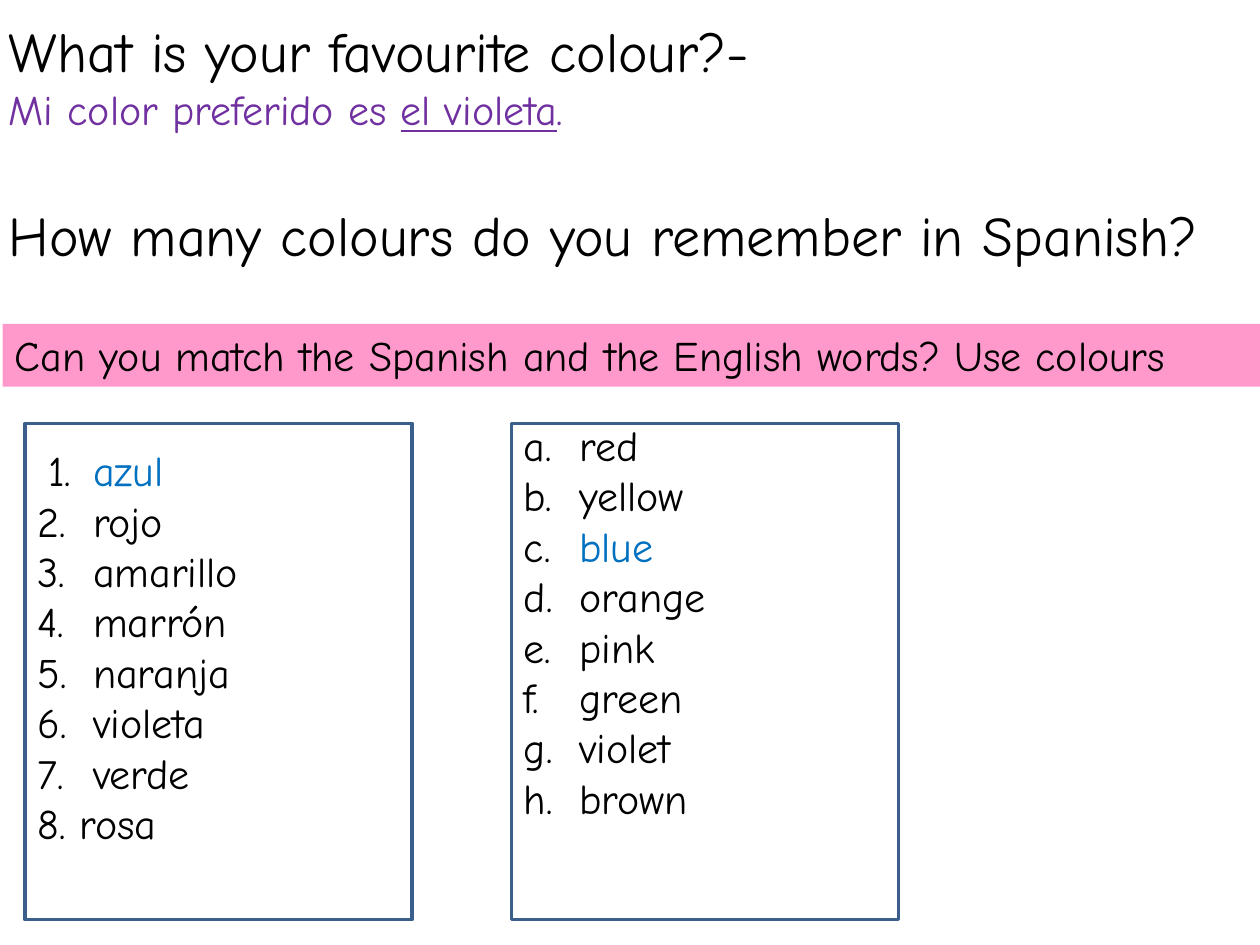
import pptx
import pptx.util
import pptx.dml.color
import pptx.enum.shapes
import pptx.enum.text

Inches, Pt = pptx.util.Inches, pptx.util.Pt
ANCHOR = pptx.enum.text.MSO_ANCHOR
BLACK, WHITE, BLUE, VIOLET = "000000", "FFFFFF", "0070C0", "7030A0"


def color(hex_value):
    return pptx.dml.color.RGBColor.from_string(hex_value)


def add_text(paragraph, text, size=24, ink=BLACK, underline=None):
    paragraph.alignment = pptx.enum.text.PP_ALIGN.LEFT
    run = paragraph.add_run()
    run.text = text
    run.font.name = "Comic Neue"
    run.font.size = Pt(size)
    run.font.color.rgb = color(ink)
    run.font.underline = underline


presentation = pptx.Presentation()
presentation.slide_width, presentation.slide_height = Inches(10), Inches(7.5)
slide = presentation.slides.add_slide(presentation.slide_layouts[5])

# Questions in the title
questions = slide.shapes.title
questions.left, questions.top = Inches(-0.03), Inches(-0.2)
questions.width, questions.height = Inches(10), Inches(2.66)
questions.fill.solid()
questions.fill.fore_color.rgb = color(WHITE)
frame = questions.text_frame
frame.word_wrap = True
frame.auto_size = pptx.enum.text.MSO_AUTO_SIZE.SHAPE_TO_FIT_TEXT
frame.vertical_anchor = ANCHOR.MIDDLE
add_text(frame.paragraphs[0], "What is your favourite colour?-", size=32)
answer = frame.add_paragraph()
answer.space_before = Pt(0)
add_text(answer, "Mi color preferido es ", ink=VIOLET)
add_text(answer, "el violeta", ink=VIOLET, underline=True)
add_text(answer, ".", ink=VIOLET)
recall = frame.add_paragraph()
recall.space_before = Pt(38)
add_text(recall, "How many colours do you remember in Spanish?", size=32)

# Word lists: left edge, lines left free at the bottom, marker and word
spanish = [("1.\t", "azul"), ("2.\t", "rojo"), ("3.\t", "amarillo"), ("4.\t", "marrón"),
           ("5.\t", "naranja"), ("6.\t", "violeta"), ("7.\t", "verde"), ("8. ", "rosa")]
english = [("a.\t", "red"), ("b.\t", "yellow"), ("c.\t", "blue"), ("d.\t", "orange"),
           ("e.\t", "pink"), ("f.\t", "green"), ("g.\t", "violet"), ("h.\t", "brown")]
for left, free_lines, words in [(0.2, 1, spanish), (4.06, 2, english)]:
    word_box = slide.shapes.add_shape(
        pptx.enum.shapes.MSO_SHAPE.RECTANGLE,
        Inches(left), Inches(3.36), Inches(3.07), Inches(3.94))
    word_box.shadow.inherit = False
    word_box.fill.solid()
    word_box.fill.fore_color.rgb = color(WHITE)
    word_box.line.color.rgb = color("3A5F8C")
    word_box.line.width = Pt(2)
    frame = word_box.text_frame
    frame.word_wrap = True
    frame.vertical_anchor = ANCHOR.MIDDLE
    frame.margin_bottom = Inches(0.05 + 0.4 * free_lines)
    for index, (marker, word) in enumerate(words):
        entry = frame.add_paragraph() if index else frame.paragraphs[0]
        # Hanging indent lines the words up after their markers
        indent = entry._p.get_or_add_pPr()
        indent.set("marL", str(Inches(0.44)))
        indent.set("indent", str(Inches(-0.44)))
        if marker == "1.\t":
            add_text(entry, " ", size=18)
        add_text(entry, marker)
        add_text(entry, word, ink=BLUE if word in ("azul", "blue") else BLACK)

# Task band
task = slide.shapes.add_textbox(Inches(0.02), Inches(2.57), Inches(9.98), Inches(0.5))
task.fill.solid()
task.fill.fore_color.rgb = color("FF99CC")
task.text_frame.word_wrap = True
task.text_frame.auto_size = pptx.enum.text.MSO_AUTO_SIZE.SHAPE_TO_FIT_TEXT
add_text(task.text_frame.paragraphs[0],
         "Can you match the Spanish and the English words? Use colours")

presentation.save("out.pptx")
